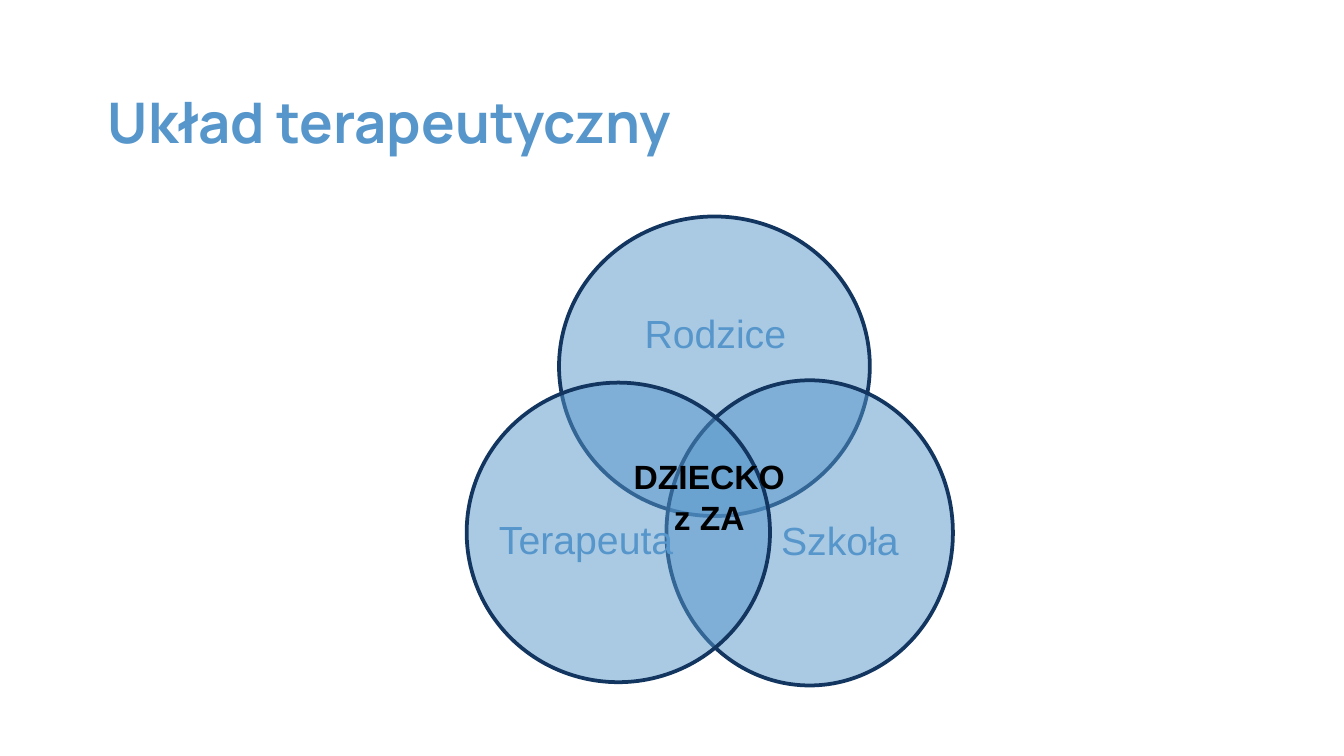
from lxml.etree import SubElement
from pptx import Presentation
from pptx.dml.color import RGBColor
from pptx.enum.shapes import MSO_SHAPE
from pptx.enum.text import MSO_ANCHOR, MSO_AUTO_SIZE, PP_ALIGN
from pptx.oxml.ns import qn
from pptx.util import Pt

COLORS = {"blue": "5696CB", "navy": "133660", "black": "000000"}

CIRCLES = [
    ("Rodzice", (299.5, 116, 166.5, 160.5), (322, 144, 122.5, 72)),
    ("Szkoła", (357, 203.75, 153.5, 163.5), (404, 246, 92, 90)),
    ("Terapeuta", (250, 205, 162.5, 160.5), (265, 246, 98, 88.5)),
]


def color(name):
    return RGBColor.from_string(COLORS[name])


def write_text(frame, text, size, font="Arial", ink="blue", bold=False,
               align=PP_ALIGN.CENTER, anchor=MSO_ANCHOR.MIDDLE,
               spacing=None, margins=(0, 0, 0, 0)):
    frame.word_wrap = True
    frame.auto_size = MSO_AUTO_SIZE.NONE
    frame.vertical_anchor = anchor
    (frame.margin_left, frame.margin_top,
     frame.margin_right, frame.margin_bottom) = map(Pt, margins)
    paragraph = frame.paragraphs[0]
    paragraph.alignment = align
    if spacing is not None:
        paragraph.line_spacing = spacing
    run = paragraph.add_run()
    run.text = text
    run.font.name = font
    run.font.size = Pt(size)
    run.font.bold = bold
    run.font.color.rgb = color(ink)


class DiagramSlide:
    def __init__(self, presentation):
        self.slide = presentation.slides.add_slide(presentation.slide_layouts[5])

    def title(self, text, box):
        shape = self.slide.shapes.title
        shape.left, shape.top, shape.width, shape.height = map(Pt, box)
        write_text(shape.text_frame, text, 30, font="Manrope", bold=True,
                   align=PP_ALIGN.LEFT, margins=(7.2, 7.2, 7.2, 7.2))

    def circle(self, shapes, box):
        shape = shapes.add_shape(MSO_SHAPE.OVAL, *map(Pt, box))
        shape.shadow.inherit = False
        shape.fill.solid()
        shape.fill.fore_color.rgb = color("blue")
        fill_color = shape.fill._xPr.find(qn("a:solidFill"))[0]
        SubElement(fill_color, qn("a:alpha"), val="50000")
        shape.line.color.rgb = color("navy")
        shape.line.width = Pt(2)

    def label(self, shapes, text, box, **style):
        shape = shapes.add_textbox(*map(Pt, box))
        write_text(shape.text_frame, text, **style)

    def venn(self, circles):
        shapes = self.slide.shapes.add_group_shape().shapes
        for name, circle_box, label_box in circles:
            self.circle(shapes, circle_box)
            self.label(shapes, name, label_box, size=21, spacing=0.9)


def main():
    presentation = Presentation()
    presentation.slide_width, presentation.slide_height = Pt(720), Pt(405)
    diagram = DiagramSlide(presentation)
    diagram.title("Układ terapeutyczny", (50.5, 21.5, 439, 87))
    diagram.venn(CIRCLES)
    diagram.label(diagram.slide.shapes, "DZIECKO z ZA", (332.5, 231, 95, 60),
                  size=18, ink="black", bold=True, anchor=MSO_ANCHOR.TOP,
                  spacing=Pt(22), margins=(5, 12.7, 5, 3.6))
    presentation.save("out.pptx")


if __name__ == "__main__":
    main()
